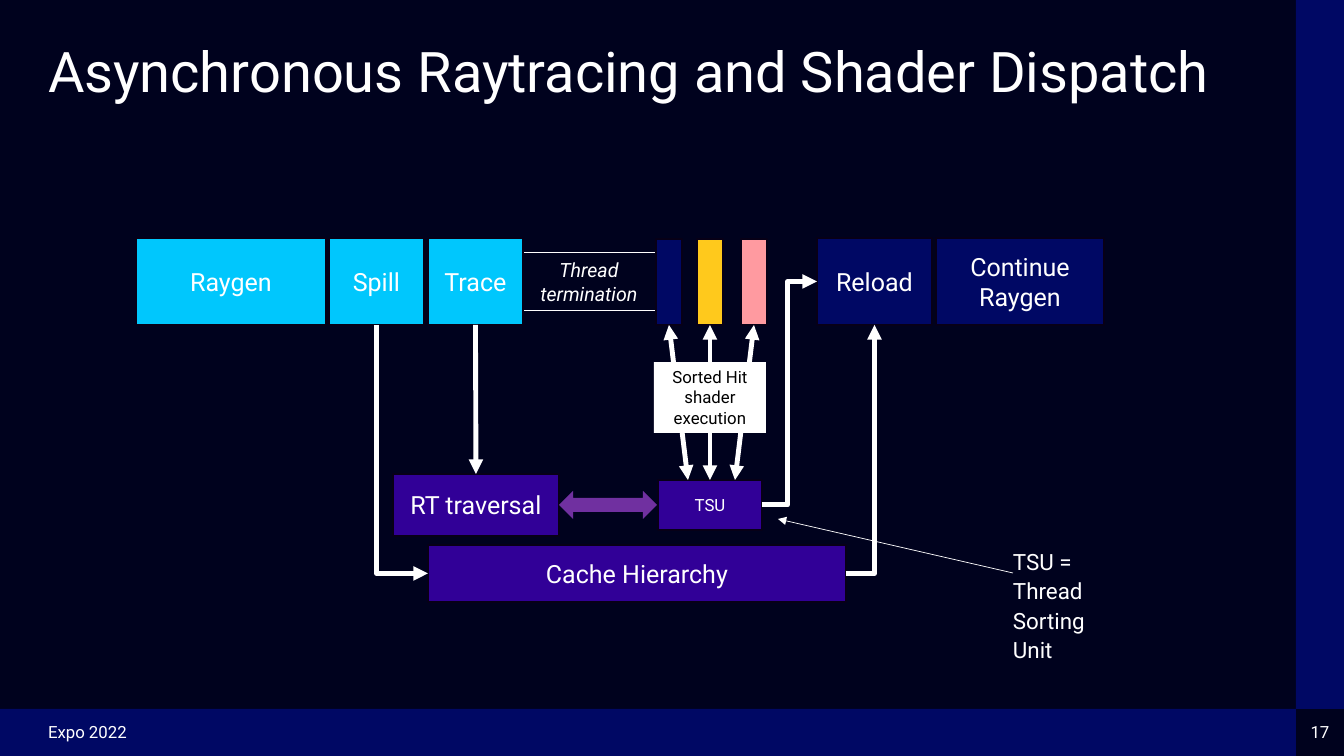
import pptx
import pptx.util
import pptx.dml.color
import pptx.enum.shapes
import pptx.enum.text
import pptx.oxml
import pptx.oxml.ns
from dataclasses import dataclass

SCALE = 12192000 / 1344  # EMU in one px
KIND = pptx.enum.shapes.MSO_SHAPE
LINK = pptx.enum.shapes.MSO_CONNECTOR
ALIGN = pptx.enum.text.PP_ALIGN
ANCHOR = pptx.enum.text.MSO_ANCHOR
TOP, LEFT, BOTTOM, RIGHT = range(4)  # glue points of a box


@dataclass
class Theme:
    font: str = "Roboto"
    back: str = "00021E"
    navy: str = "000864"
    edge: str = "070017"
    cyan: str = "00C7FD"
    gold: str = "FFC91C"
    pink: str = "FF9AA0"
    violet: str = "310097"
    purple: str = "7030A0"
    white: str = "FFFFFF"
    black: str = "000000"
    title: float = 40
    label: float = 17.9
    note: float = 16
    term: float = 14
    small: float = 12


theme = Theme()
color = pptx.dml.color.RGBColor.from_string

deck = pptx.Presentation()
deck.slide_width = round(1344 * SCALE)
deck.slide_height = round(756 * SCALE)
slide = deck.slides.add_slide(deck.slide_layouts[6])
slide.background.fill.solid()
slide.background.fill.fore_color.rgb = color(theme.back)


def box(at, text="", size=theme.label, fill=None, line=None, ink=theme.white,
        kind=KIND.RECTANGLE, align=ALIGN.CENTER, anchor=ANCHOR.MIDDLE,
        inset=(10, 5), space=None, width=1, italic=None):
    place = [round(v * SCALE) for v in at]
    if fill or line:
        shape = slide.shapes.add_shape(kind, *place)
        shape.shadow.inherit = False
        if fill:
            shape.fill.solid()
            shape.fill.fore_color.rgb = color(fill)
        else:
            shape.fill.background()
        if line:
            shape.line.color.rgb = color(line)
            shape.line.width = pptx.util.Pt(width)
        else:
            shape.line.fill.background()
    else:
        shape = slide.shapes.add_textbox(*place)
    if text:
        frame = shape.text_frame
        frame.text = text
        frame.word_wrap = True
        frame.vertical_anchor = anchor
        frame.margin_left = frame.margin_right = round(inset[0] * SCALE)
        frame.margin_top = frame.margin_bottom = round(inset[1] * SCALE)
        for para in frame.paragraphs:
            para.alignment = align
            para.line_spacing = space
            for run in para.runs:
                run.font.name = theme.font
                run.font.size = pptx.util.Pt(size)
                run.font.color.rgb = color(ink)
                run.font.italic = italic
    return shape


def link(ends=(0, 0, 0, 0), glue=None, tips=("tailEnd",), width=3.5, form=None, bend=None):
    kind = LINK.ELBOW if form else LINK.STRAIGHT
    line = slide.shapes.add_connector(kind, *[round(v * SCALE) for v in ends])
    if glue:
        line.begin_connect(*glue[0])
        line.end_connect(*glue[1])
    line.line.color.rgb = color(theme.white)
    line.line.width = pptx.util.Pt(width)
    stroke = line.line._get_or_add_ln()
    for tip in tips:
        stroke.append(pptx.oxml.parse_xml(
            f'<a:{tip} {pptx.oxml.ns.nsdecls("a")} type="triangle"/>'))
    props = line._element.spPr
    props.append(pptx.oxml.parse_xml(f'<a:effectLst {pptx.oxml.ns.nsdecls("a")}/>'))
    if form:
        shape = props.find(pptx.oxml.ns.qn("a:prstGeom"))
        shape.set("prst", form)
        if bend:
            shape.find(pptx.oxml.ns.qn("a:avLst")).append(pptx.oxml.parse_xml(
                f'<a:gd {pptx.oxml.ns.nsdecls("a")} name="adj1" fmla="val {bend}"/>'))


# Frame, title and footer
box((0, 709, 1296, 47), fill=theme.navy)
box((1296, 0, 48, 709), fill=theme.navy)
box((48, 48, 1229, 135), "Asynchronous Raytracing and Shader Dispatch", theme.title,
    align=ALIGN.LEFT, anchor=ANCHOR.TOP, inset=(0, 0), space=0.83)
box((48, 708, 355, 47), "Expo 2022", theme.small, align=ALIGN.LEFT, inset=(0, 0))
box((1296, 708, 48, 47), "17", theme.small, inset=(0, 0))

# Thread termination, tucked under its neighbours
box((508, 253, 162, 58), "Thread termination", theme.term, line=theme.white,
    anchor=ANCHOR.TOP, width=0.75, italic=True)

# Hit shader bars
for x, fill in ((656, theme.navy), (697, theme.gold), (741, theme.pink)):
    box((x, 239, 26, 86), fill=fill, line=theme.edge)

# Stages and hardware units
nodes = {}
for name, fill, size, at in (
    ("Raygen", theme.cyan, theme.label, (136, 238, 190, 87)),
    ("Spill", theme.cyan, theme.label, (329, 238, 95, 87)),
    ("Trace", theme.cyan, theme.label, (428, 238, 95, 87)),
    ("Reload", theme.navy, theme.label, (817, 238, 115, 87)),
    ("Continue Raygen", theme.navy, theme.label, (936, 238, 168, 87)),
    ("RT traversal", theme.violet, theme.label, (393, 474, 166, 62)),
    ("TSU", theme.violet, theme.small, (658, 480, 104, 50)),
    ("Cache Hierarchy", theme.violet, theme.label, (428, 545, 418, 57)),
):
    nodes[name] = box(at, name, size, fill, theme.edge)

# Flow between the units
box((559, 491, 98, 28), fill=theme.purple, kind=KIND.LEFT_RIGHT_ARROW)
link(glue=((nodes["Trace"], BOTTOM), (nodes["RT traversal"], TOP)))
link(glue=((nodes["Cache Hierarchy"], LEFT), (nodes["Spill"], BOTTOM)),
     tips=("headEnd",), form="bentConnector2")
link(glue=((nodes["Cache Hierarchy"], RIGHT), (nodes["Reload"], BOTTOM)),
     form="bentConnector2")
link(glue=((nodes["TSU"], RIGHT), (nodes["Reload"], LEFT)),
     form="bentConnector3", bend=46900)

# Sorting arrows under their label
for low, high in ((688, 669), (710, 710), (735, 754)):
    link((low, 480, high, 325), tips=("headEnd", "tailEnd"))
box((654, 362, 112, 71), "Sorted Hit shader execution", theme.small, theme.white,
    ink=theme.black, anchor=ANCHOR.TOP, inset=(0, 5))

# Meaning of TSU
box((1013, 545, 153, 131), "TSU =\nThread\nSorting\nUnit", theme.note,
    align=ALIGN.LEFT, anchor=ANCHOR.TOP, inset=(0, 0), space=1.1)
link((1013, 573, 778, 519), width=0.5)

deck.save("out.pptx")
